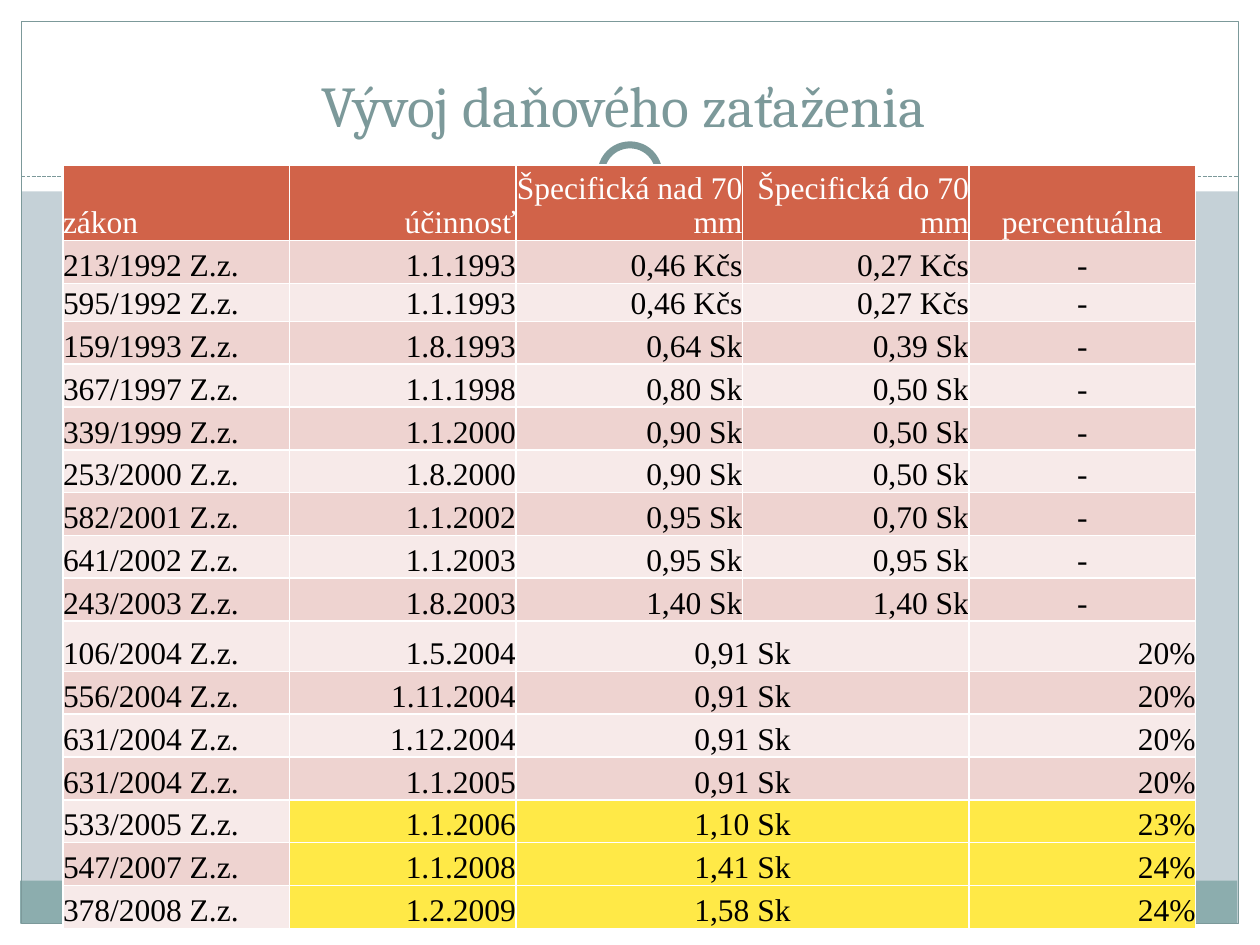
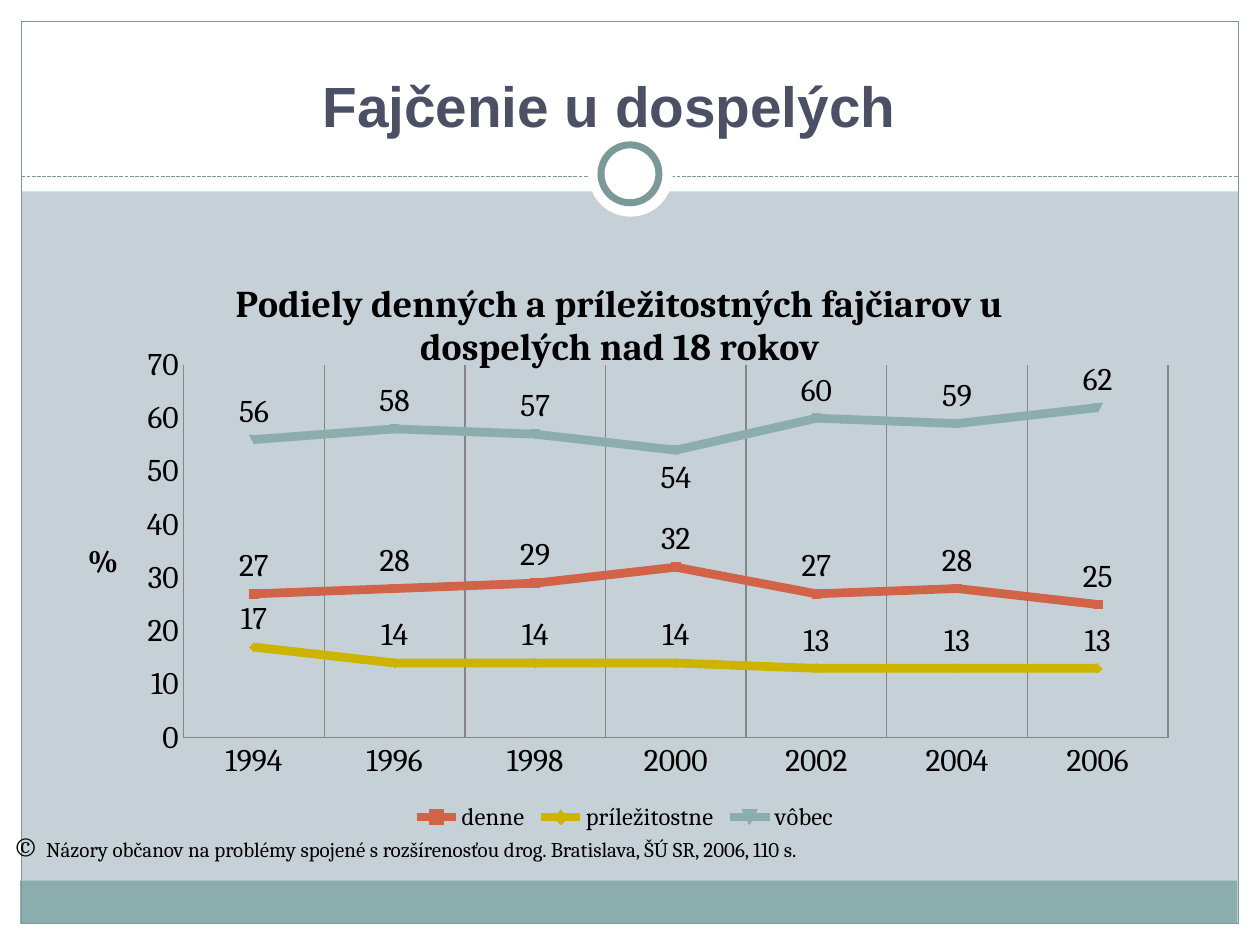
from lxml.etree import SubElement
from pptx import Presentation
from pptx.chart.data import CategoryChartData
from pptx.dml.color import RGBColor
from pptx.enum.chart import XL_CHART_TYPE, XL_LABEL_POSITION, XL_LEGEND_POSITION, XL_TICK_MARK
from pptx.enum.dml import MSO_LINE
from pptx.enum.shapes import MSO_CONNECTOR, MSO_SHAPE
from pptx.enum.text import MSO_ANCHOR, PP_ALIGN
from pptx.oxml import parse_xml
from pptx.oxml.ns import nsdecls, qn
from pptx.util import Inches, Pt

WHITE, BLACK, GRAY = "FFFFFF", "000000", "868686"
BACKGROUND, TEAL, DARK_TEAL, SLATE = "C5D1D7", "8CADAE", "7C999A", "4B5064"
ORANGE, MUSTARD, YELLOW = "D16349", "CCB400", "FFE947"
BANDS = ["F7EAE9", "EED3D0"]
LEFT, RIGHT, CENTER = PP_ALIGN.LEFT, PP_ALIGN.RIGHT, PP_ALIGN.CENTER
RECTANGLE, OVAL, STRAIGHT = MSO_SHAPE.RECTANGLE, MSO_SHAPE.OVAL, MSO_CONNECTOR.STRAIGHT

color = RGBColor.from_string


def set_font(font, name, size, hex_color, bold=False):
    font.name, font.size, font.bold = name, Pt(size), bold
    font.color.rgb = color(hex_color)


def set_layout(element, **fractions):
    """Place a chart part by fractions of the chart's width and height."""
    for old_layout in element.findall(qn("c:layout")):
        element.remove(old_layout)
    layout = parse_xml(f"<c:layout {nsdecls('c')}><c:manualLayout/></c:layout>")
    if "w" in fractions:
        SubElement(layout[0], qn("c:layoutTarget"), val="inner")
    for key in "xy":
        SubElement(layout[0], qn(f"c:{key}Mode"), val="edge")
    for key, value in fractions.items():
        SubElement(layout[0], qn(f"c:{key}"), val=str(value))
    element.insert(0 if element.find(qn("c:tx")) is None else 1, layout)


presentation = Presentation()
presentation.slide_width, presentation.slide_height = Inches(10), Inches(7.5)

# Bands, frame, divider, ring and title of each slide
decorations = [
    (RECTANGLE, (0, 7.33, 10, 0.17), WHITE, None),
    (RECTANGLE, (0, 0, 10, 1.52), WHITE, None),
    (RECTANGLE, (0, 0, 0.17, 7.5), WHITE, None),
    (RECTANGLE, (9.83, 0, 0.17, 7.5), WHITE, None),
    (RECTANGLE, (0.16, 6.99, 9.66, 0.34), TEAL, None),
    (RECTANGLE, (0.17, 0.17, 9.66, 7.16), None, 0.75),
    (STRAIGHT, (0.17, 1.4, 9.83, 1.4), None, 0.75),
    (OVAL, (4.67, 1.05, 0.67, 0.67), WHITE, None),
    (OVAL, (4.77, 1.15, 0.46, 0.46), WHITE, 4),
]
titles = [
    ("Vývoj daňového zaťaženia ", (0.5, 0.3, 9, 0.85), ("Cambria", 33, DARK_TEAL)),
    ("Fajčenie u dospelých", (0.67, 0.44, 8.33, 0.71), ("Arial", 32.4, SLATE, True)),
]
for title, title_place, title_font in titles:
    slide = presentation.slides.add_slide(presentation.slide_layouts[6])
    slide.background.fill.solid()
    slide.background.fill.fore_color.rgb = color(BACKGROUND)

    for kind, place, fill, line_width in decorations:
        if kind is STRAIGHT:
            shape = slide.shapes.add_connector(kind, *map(Inches, place))
            shape.line.dash_style = MSO_LINE.SQUARE_DOT
            SubElement(shape._element.spPr, qn("a:effectLst"))
        else:
            shape = slide.shapes.add_shape(kind, *map(Inches, place))
            shape.shadow.inherit = False
            if fill:
                shape.fill.solid()
                shape.fill.fore_color.rgb = color(fill)
            else:
                shape.fill.background()
        if line_width:
            shape.line.color.rgb = color(DARK_TEAL)
            shape.line.width = Pt(line_width)
        else:
            shape.line.fill.background()

    title_box = slide.shapes.add_textbox(*map(Inches, title_place))
    title_box.text_frame.word_wrap = True
    title_box.text_frame.vertical_anchor = MSO_ANCHOR.BOTTOM
    paragraph = title_box.text_frame.paragraphs[0]
    paragraph.text = title
    paragraph.alignment = CENTER
    set_font(paragraph.font, *title_font)

tax_slide, smoking_slide = presentation.slides

# Slide 1: tax rates; rows of four values share one specific rate
tax_rows = [
    ("zákon", "účinnosť", "Špecifická nad 70 mm", "Špecifická do 70 mm", "percentuálna"),
    ("213/1992 Z.z.", "1.1.1993", "0,46 Kčs", "0,27 Kčs", "-"),
    ("595/1992 Z.z.", "1.1.1993", "0,46 Kčs", "0,27 Kčs", "-"),
    ("159/1993 Z.z.", "1.8.1993", "0,64 Sk", "0,39 Sk", "-"),
    ("367/1997 Z.z.", "1.1.1998", "0,80 Sk", "0,50 Sk", "-"),
    ("339/1999 Z.z.", "1.1.2000", "0,90 Sk", "0,50 Sk", "-"),
    ("253/2000 Z.z.", "1.8.2000", "0,90 Sk", "0,50 Sk", "-"),
    ("582/2001 Z.z.", "1.1.2002", "0,95 Sk", "0,70 Sk", "-"),
    ("641/2002 Z.z.", "1.1.2003", "0,95 Sk", "0,95 Sk", "-"),
    ("243/2003 Z.z.", "1.8.2003", "1,40 Sk", "1,40 Sk", "-"),
    ("106/2004 Z.z.", "1.5.2004", "0,91 Sk", "20%"),
    ("556/2004 Z.z.", "1.11.2004", "0,91 Sk", "20%"),
    ("631/2004 Z.z.", "1.12.2004", "0,91 Sk", "20%"),
    ("631/2004 Z.z.", "1.1.2005", "0,91 Sk", "20%"),
    ("533/2005 Z.z.", "1.1.2006", "1,10 Sk", "23%"),
    ("547/2007 Z.z.", "1.1.2008", "1,41 Sk", "24%"),
    ("378/2008 Z.z.", "1.2.2009", "1,58 Sk", "24%"),
]
FIRST_HIGHLIGHTED_ROW = 14
special_heights = {0: 0.55, 2: 0.28, 10: 0.4}
table = tax_slide.shapes.add_table(
    len(tax_rows), 5, Inches(0.5), Inches(1.31), Inches(8.99), Inches(5.99)).table
for row_index, values in enumerate(tax_rows):
    table.rows[row_index].height = Inches(special_heights.get(row_index, 0.34))
    alignments = [LEFT, RIGHT, RIGHT, RIGHT, CENTER]
    if len(values) == 4:
        table.cell(row_index, 2).merge(table.cell(row_index, 3))
        values = (*values[:3], "", values[3])
        alignments = [LEFT, RIGHT, CENTER, CENTER, RIGHT]
    for column_index, (value, alignment) in enumerate(zip(values, alignments)):
        cell = table.cell(row_index, column_index)
        cell.margin_left = cell.margin_right = cell.margin_top = cell.margin_bottom = 0
        cell.vertical_anchor = MSO_ANCHOR.BOTTOM
        if row_index == 0:
            fill = ORANGE
        elif row_index >= FIRST_HIGHLIGHTED_ROW and column_index > 0:
            fill = YELLOW
        else:
            fill = BANDS[row_index % 2]
        cell.fill.solid()
        cell.fill.fore_color.rgb = color(fill)
        paragraph = cell.text_frame.paragraphs[0]
        paragraph.text = value
        paragraph.alignment = alignment
        set_font(paragraph.font, "Times New Roman", 18, BLACK if row_index else WHITE)

# Slide 2: smoking among adults
chart_data = CategoryChartData()
chart_data.categories = [str(year) for year in range(1994, 2007, 2)]
smoking_shares = [
    ("denne", (27, 28, 29, 32, 27, 28, 25), ORANGE),
    ("príležitostne", (17, 14, 14, 14, 13, 13, 13), MUSTARD),
    ("vôbec", (56, 58, 57, 54, 60, 59, 62), TEAL),
]
for name, shares, _ in smoking_shares:
    chart_data.add_series(name, shares)
chart = smoking_slide.shapes.add_chart(
    XL_CHART_TYPE.LINE_MARKERS, Inches(0.47), Inches(2.02), Inches(8.98), Inches(4.62),
    chart_data).chart
set_font(chart.font, "Cambria", 18, BLACK)
plot = chart.plots[0]
plot.vary_by_categories = False

for series, (_, _, series_color) in zip(plot.series, smoking_shares):
    series.smooth = False
    series.format.line.color.rgb = color(series_color)
    series.format.line.width = Pt(5)
    series.data_labels.show_value = True
    series.data_labels.position = XL_LABEL_POSITION.ABOVE
plot.series[2].points[3].data_label.position = XL_LABEL_POSITION.BELOW

category_axis, value_axis = chart.category_axis, chart.value_axis
for axis in (category_axis, value_axis):
    axis.major_tick_mark = axis.minor_tick_mark = XL_TICK_MARK.NONE
    axis.format.line.color.rgb = color(GRAY)
category_axis.has_major_gridlines = True
category_axis.major_gridlines.format.line.color.rgb = color(GRAY)
value_axis.has_major_gridlines = False
value_axis.minimum_scale, value_axis.maximum_scale, value_axis.major_unit = 0, 70, 10

chart.has_title = True
chart_title, axis_title = chart.chart_title, value_axis.axis_title
for part, text, size in [
    (chart_title, "Podiely denných a príležitostných fajčiarov u dospelých nad 18 rokov", 21.6),
    (axis_title, "%", 18),
]:
    paragraph = part.text_frame.paragraphs[0]
    paragraph.text = text
    set_font(paragraph.font, "Cambria", size, BLACK, True)
chart_title.include_in_layout = True
axis_title.text_frame._txBody.bodyPr.set("rot", "0")
set_layout(chart_title._element, x=0.15, y=0.03)
set_layout(axis_title._element, x=0.02, y=0.48)
set_layout(chart._chartSpace.chart.plotArea, x=0.11, y=0.19, w=0.87, h=0.64)

chart.has_legend = True
chart.legend.position = XL_LEGEND_POSITION.BOTTOM
chart.legend.include_in_layout = False
set_font(chart.legend.font, "Cambria", 14, BLACK)

source_box = smoking_slide.shapes.add_textbox(0, Inches(6.51), Inches(10), Inches(0.4))
source_box.text_frame.word_wrap = True
for text, size in [
    ("© ", 18),
    ("Názory občanov na problémy spojené s rozšírenosťou drog. Bratislava, ŠÚ SR, 2006, 110 s.", 12),
]:
    run = source_box.text_frame.paragraphs[0].add_run()
    run.text = text
    set_font(run.font, "Cambria", size, BLACK)

presentation.save("out.pptx")
